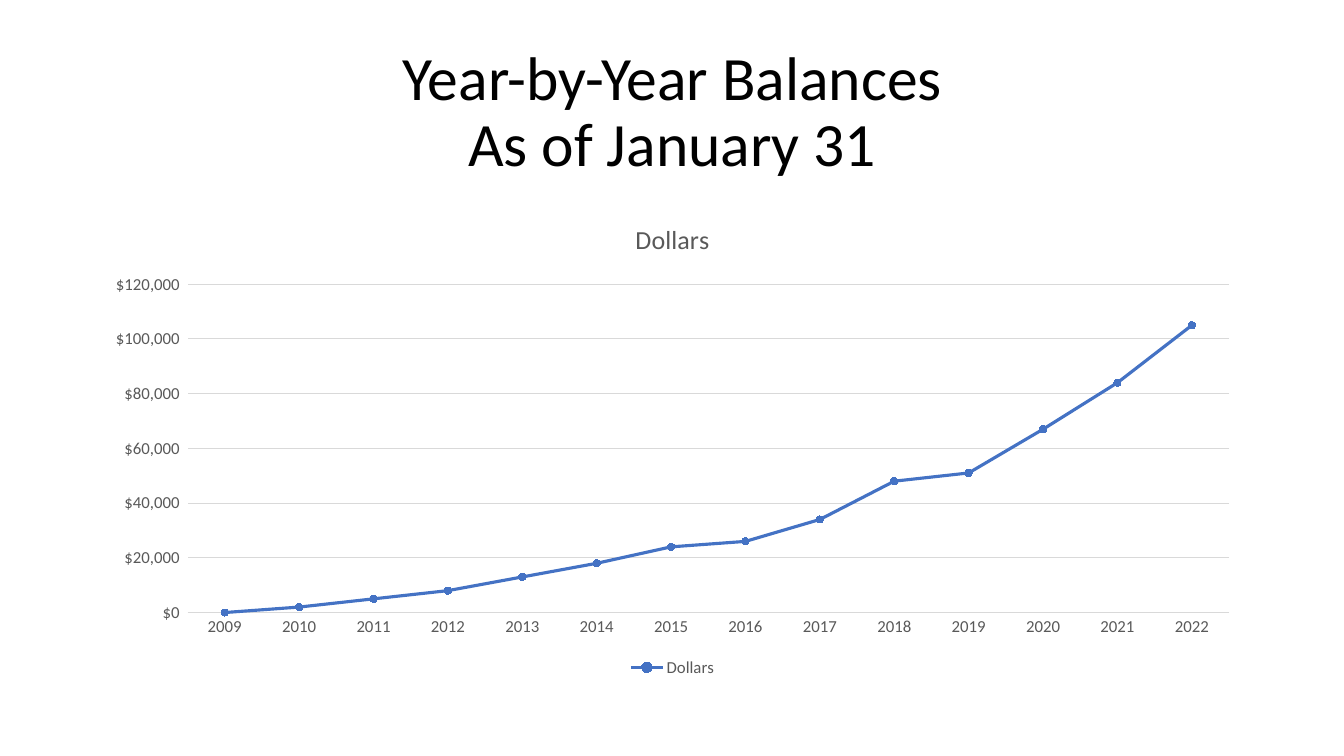
from pptx import Presentation
from pptx.chart.data import CategoryChartData
from pptx.dml.color import RGBColor
from pptx.enum.chart import XL_CHART_TYPE as ChartType, XL_LEGEND_POSITION as LegendPosition
from pptx.enum.chart import XL_MARKER_STYLE as MarkerStyle, XL_TICK_MARK as TickMark
from pptx.enum.text import MSO_ANCHOR as Anchor, PP_ALIGN as Align
from pptx.util import Inches, Pt

COLORS = {"heading": "000000", "label": "595959", "grid": "D9D9D9", "balance": "4472C4"}
FONT = "Calibri"
HEADING = ["Year-by-Year Balances", "As of January 31"]
FIRST_YEAR = 2009
BALANCES = [0, 2000, 5000, 8000, 13000, 18000, 24000,
            26000, 34000, 48000, 51000, 67000, 84000, 105000]


def color(name):
    return RGBColor.from_string(COLORS[name])


def style_font(font, size, name):
    font.name = FONT
    font.size = Pt(size)
    font.bold = False
    font.color.rgb = color(name)


def style_line(line, width, name):
    line.width = Pt(width)
    line.color.rgb = color(name)


def add_heading(slide, left, top, width, height):
    heading = slide.shapes.add_textbox(
        Inches(left), Inches(top), Inches(width), Inches(height)).text_frame
    heading.word_wrap = True
    heading.vertical_anchor = Anchor.MIDDLE
    paragraph = heading.paragraphs[0]
    paragraph.alignment = Align.CENTER
    paragraph.line_spacing = 0.9
    for index, words in enumerate(HEADING):
        if index:
            paragraph.add_line_break()
        run = paragraph.add_run()
        run.text = words
        style_font(run.font, 44, "heading")


def style_axis(axis):
    axis.major_tick_mark = TickMark.NONE
    axis.minor_tick_mark = TickMark.NONE
    style_font(axis.tick_labels.font, 12, "label")


def add_balance_chart(slide, left, top, width, height):
    data = CategoryChartData()
    data.categories = [str(FIRST_YEAR + offset) for offset in range(len(BALANCES))]
    data.add_series("Dollars", BALANCES)
    chart = slide.shapes.add_chart(
        ChartType.LINE_MARKERS, Inches(left), Inches(top),
        Inches(width), Inches(height), data).chart
    style_font(chart.font, 10, "heading")

    chart.has_title = True
    caption = chart.chart_title.text_frame.paragraphs[0].add_run()
    caption.text = "Dollars"
    style_font(caption.font, 18.6, "label")
    chart.chart_title.include_in_layout = False

    chart.has_legend = True
    chart.legend.position = LegendPosition.BOTTOM
    chart.legend.include_in_layout = False
    style_font(chart.legend.font, 12, "label")

    years, dollars = chart.category_axis, chart.value_axis
    style_axis(years)
    style_line(years.format.line, 0.75, "grid")
    style_axis(dollars)
    dollars.format.line.fill.background()
    dollars.minimum_scale, dollars.maximum_scale = 0, 120000
    dollars.major_unit = 20000
    dollars.has_major_gridlines = True
    style_line(dollars.major_gridlines.format.line, 0.75, "grid")
    dollars.tick_labels.number_format = r'"$"#,##0_);\("$"#,##0\)'
    dollars.tick_labels.number_format_is_linked = False

    chart.plots[0].vary_by_categories = False
    balances = chart.plots[0].series[0]
    balances.smooth = False
    style_line(balances.format.line, 2.25, "balance")
    balances.marker.style = MarkerStyle.CIRCLE
    balances.marker.size = 5
    balances.marker.format.fill.solid()
    balances.marker.format.fill.fore_color.rgb = color("balance")
    style_line(balances.marker.format.line, 0.75, "balance")


def main():
    deck = Presentation()
    deck.slide_width, deck.slide_height = Inches(13.33), Inches(7.5)
    slide = deck.slides.add_slide(deck.slide_layouts[6])
    add_heading(slide, 0.92, 0.4, 11.5, 1.45)
    add_balance_chart(slide, 0.92, 2, 11.5, 4.76)
    deck.save("out.pptx")


if __name__ == "__main__":
    main()
